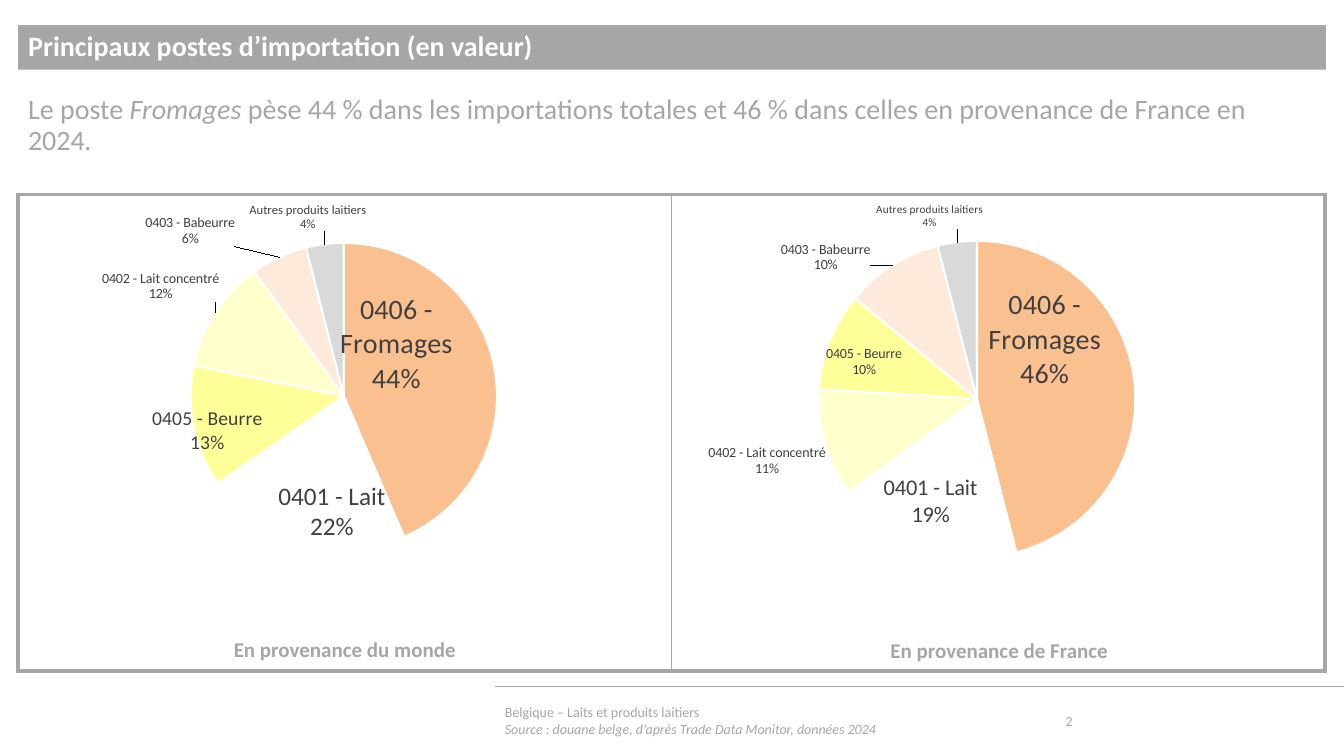
from math import cos, pi, sin
from lxml import etree
from pptx import Presentation
from pptx.chart.data import CategoryChartData
from pptx.dml.color import RGBColor
from pptx.enum.chart import XL_CHART_TYPE as ChartType
from pptx.enum.text import MSO_ANCHOR as Anchor, PP_ALIGN as Align
from pptx.oxml import parse_xml
from pptx.oxml.ns import nsdecls, qn
from pptx.util import Inches, Pt

GREY = RGBColor(0xA6, 0xA6, 0xA6)
WHITE = RGBColor(0xFF, 0xFF, 0xFF)
BLACK = RGBColor(0, 0, 0)
PRODUCT_COLOURS = {
    "0406 - Fromages": RGBColor(0xFA, 0xC0, 0x90),
    "0401 - Lait": WHITE,
    "0405 - Beurre": RGBColor(0xFF, 0xFF, 0x99),
    "0402 - Lait concentré": RGBColor(0xFF, 0xFF, 0xCC),
    "0403 - Babeurre": RGBColor(0xFD, 0xEA, 0xDA),
    "Autres produits laitiers": RGBColor(0xD9, 0xD9, 0xD9),
}
WRAPPED = "0402 - Lait concentré"

TITLE = "Principaux postes d’importation (en valeur)"
MESSAGE = [
    ("Le poste ", False),
    ("Fromages ", True),
    ("pèse 44 % dans les importations totales et 46 % dans celles "
     "en provenance de France en 2024", False),
    (".", True),
]
FOOTER = [
    [("Belgique – Laits et produits laitiers", False)],
    [("Source : douane belge, d’après Trade Data Monitor, données 2024", True)],
]
PAGE = "2"

# product, share, label size, label centre, label width and height
ORIGINS = [
    {"caption": "En provenance du monde", "left": 0.18, "width": 6.47,
     "caption_top": 6.27, "centre": (3.41, 3.93), "radius": 1.52,
     "slices": [
         ("0406 - Fromages", 0.44, 20, (3.87, 3.42), (1.11, 1.04)),
         ("0401 - Lait", 0.22, 18, (3.31, 5.03), (1.06, 0.62)),
         ("0405 - Beurre", 0.13, 14, (2.12, 4.26), (1.09, 0.48)),
         ("0402 - Lait concentré", 0.12, 10, (1.8, 2.76), (0.85, 0.54)),
         ("0403 - Babeurre", 0.06, 10, (1.91, 2.33), (0.89, 0.34)),
         ("Autres produits laitiers", 0.04, 9, (3.06, 2.21), (1.16, 0.3))]},
    {"caption": "En provenance de France", "left": 6.67, "width": 6.48,
     "caption_top": 6.28, "centre": (9.69, 3.96), "radius": 1.57,
     "slices": [
         ("0406 - Fromages", 0.46, 20, (10.3, 3.37), (1.11, 1.04)),
         ("0401 - Lait", 0.19, 16, (9.25, 4.92), (0.93, 0.54)),
         ("0402 - Lait concentré", 0.11, 10, (7.82, 4.67), (0.85, 0.54)),
         ("0405 - Beurre", 0.1, 10, (8.62, 3.59), (0.76, 0.36)),
         ("0403 - Babeurre", 0.1, 10, (8.22, 2.59), (0.89, 0.34)),
         ("Autres produits laitiers", 0.04, 8, (9.23, 2.2), (1.06, 0.28))]},
]
CHART_TOP, CHART_HEIGHT = 1.93, 4.29

LABEL = """<c:dLbl {ns}><c:idx val="{idx}"/>
<c:layout><c:manualLayout><c:x val="{x:.4f}"/><c:y val="{y:.4f}"/></c:manualLayout></c:layout>
<c:numFmt formatCode="0%" sourceLinked="0"/><c:spPr><a:noFill/><a:ln><a:noFill/></a:ln></c:spPr>
<c:txPr><a:bodyPr/><a:p><a:pPr><a:defRPr sz="{size}" b="0"><a:solidFill><a:srgbClr val="404040"/>
</a:solidFill><a:latin typeface="Calibri"/></a:defRPr></a:pPr><a:endParaRPr lang="fr-FR"/></a:p></c:txPr>
<c:dLblPos val="bestFit"/><c:showLegendKey val="0"/><c:showVal val="1"/><c:showCatName val="1"/>
<c:showSerName val="0"/><c:showPercent val="0"/><c:showBubbleSize val="0"/>
<c:separator>\n</c:separator>{extension}</c:dLbl>"""
LABEL_BOX = """<c:extLst><c:ext uri="{{CE6537A1-D6FC-4f65-9D91-7224C49458BB}}"
xmlns:c15="http://schemas.microsoft.com/office/drawing/2012/chart"><c15:layout><c:manualLayout>
<c:w val="{w:.4f}"/><c:h val="{h:.4f}"/></c:manualLayout></c15:layout></c:ext></c:extLst>"""
PLOT_LAYOUT = """<c:layout {ns}><c:manualLayout><c:layoutTarget val="inner"/>
<c:xMode val="edge"/><c:yMode val="edge"/><c:x val="{x:.4f}"/><c:y val="{y:.4f}"/>
<c:w val="{w:.4f}"/><c:h val="{h:.4f}"/></c:manualLayout></c:layout>"""


def set_font(font, colour=GREY, **values):
    """Apply the Calibri format to a font."""
    for name, value in {"name": "Calibri", **values}.items():
        setattr(font, name, value)
    font.color.rgb = colour


def write(frame, paragraphs, size, colour=GREY, bold=False, anchor=Anchor.TOP,
          align=Align.LEFT, spacing=None):
    """Fill a text frame with paragraphs of (text, italic) runs."""
    frame.word_wrap = True
    frame.vertical_anchor = anchor
    for number, runs in enumerate(paragraphs):
        paragraph = frame.add_paragraph() if number else frame.paragraphs[0]
        paragraph.alignment = align
        paragraph.line_spacing = spacing
        for text, italic in runs:
            run = paragraph.add_run()
            run.text = text
            set_font(run.font, colour, size=Pt(size), bold=bold, italic=italic)


def add_text(slide, box, paragraphs, size, **style):
    """Add a text box at the given left, top, width and height."""
    write(slide.shapes.add_textbox(*map(Inches, box)).text_frame, paragraphs, size, **style)


def add_frame(slide):
    """Add the two-cell table that frames the charts."""
    table = slide.shapes.add_table(1, 2, *map(Inches, (0.18, 1.93, 12.96, 4.73))).table
    table.first_row = table.horz_banding = False
    for cell, widths in zip(table.rows[0].cells, ((3, 1, 3, 3), (1, 3, 3, 3))):
        cell.fill.background()
        properties = cell._tc.get_or_add_tcPr()
        for index, (side, width) in enumerate(zip(("lnL", "lnR", "lnT", "lnB"), widths)):
            properties.insert(index, parse_xml(
                f'<a:{side} {nsdecls("a")} w="{Pt(width)}"><a:solidFill>'
                f'<a:srgbClr val="{GREY}"/></a:solidFill></a:{side}>'))


def add_pie(slide, origin):
    """Add the pie of one origin, with its placed labels."""
    left, width, radius = origin["left"], origin["width"], origin["radius"]
    centre_x, centre_y = origin["centre"]
    slices = origin["slices"]
    data = CategoryChartData(number_format="0%")
    data.categories = [item[0] for item in slices]
    data.add_series("Series 1", [item[1] for item in slices])
    chart = slide.shapes.add_chart(
        ChartType.PIE, *map(Inches, (left, CHART_TOP, width, CHART_HEIGHT)), data).chart
    chart.has_legend = chart.has_title = False
    set_font(chart.font, BLACK, size=Pt(8))
    plot_area = chart._chartSpace.find(".//" + qn("c:plotArea"))
    for layout in plot_area.findall(qn("c:layout")):
        plot_area.remove(layout)
    plot_area.insert(0, parse_xml(PLOT_LAYOUT.format(
        ns=nsdecls("c"), x=(centre_x - radius - left) / width,
        y=(centre_y - radius - CHART_TOP) / CHART_HEIGHT,
        w=2 * radius / width, h=2 * radius / CHART_HEIGHT)))
    chart.plots[0].vary_by_categories = True
    series = chart.plots[0].series[0]
    labels = series.data_labels
    set_font(labels.font, RGBColor(0x40, 0x40, 0x40), size=Pt(8))
    labels.show_category_name = True
    total, passed = sum(item[1] for item in slices), 0
    for index, (product, share, size, (x, y), (w, h)) in enumerate(slices):
        look = series.points[index].format
        look.fill.solid()
        look.fill.fore_color.rgb = PRODUCT_COLOURS[product]
        look.line.color.rgb = WHITE
        look.line.width = Pt(1.5)
        angle = 2 * pi * (passed + share / 2) / total
        passed += share
        side_x, side_y = sin(angle), -cos(angle)
        usual_x = centre_x + radius * side_x + (w if side_x > 0 else -w) / 2
        usual_y = centre_y + radius * side_y + (h if side_y > 0 else -h) / 2
        box = LABEL_BOX.format(w=w / width, h=h / CHART_HEIGHT) if product == WRAPPED else ""
        labels._element.insert(index, parse_xml(LABEL.format(
            ns=nsdecls("c", "a"), idx=index, size=size * 100, extension=box,
            x=(x - usual_x) / width, y=(y - usual_y) / CHART_HEIGHT)))


def main():
    """Build the slide and save it."""
    deck = Presentation()
    deck.slide_width, deck.slide_height = Inches(13.33), Inches(7.5)
    slide = deck.slides.add_slide(deck.slide_layouts[5])
    title = slide.shapes.title
    for name, value in zip(("left", "top", "width", "height"), (0.18, 0.25, 12.97, 0.44)):
        setattr(title, name, Inches(value))
    title.fill.solid()
    title.fill.fore_color.rgb = GREY
    write(title.text_frame, [[(TITLE, False)]], 20, colour=WHITE, bold=True,
          anchor=Anchor.MIDDLE, spacing=0.9)
    rule = slide.shapes.add_connector(1, *map(Inches, (13.33, 6.81, 4.91, 6.81)))
    rule.line.color.rgb = GREY
    rule.line.width = Pt(0.5)
    etree.SubElement(rule._element.spPr, qn("a:effectLst"))
    add_frame(slide)
    add_text(slide, (0.18, 0.9, 12.96, 0.81), [MESSAGE], 20, spacing=0.9)
    for origin in ORIGINS:
        add_text(slide, (origin["left"], origin["caption_top"], 6.48, 0.35),
                 [[(origin["caption"], False)]], 15, bold=True, align=Align.CENTER)
        add_pie(slide, origin)
    add_text(slide, (4.91, 6.95, 5.43, 0.4), FOOTER, 10, anchor=Anchor.MIDDLE)
    add_text(slide, (10.47, 6.95, 0.99, 0.4), [[(PAGE, False)]], 10, anchor=Anchor.MIDDLE)
    deck.save("out.pptx")


if __name__ == "__main__":
    main()
